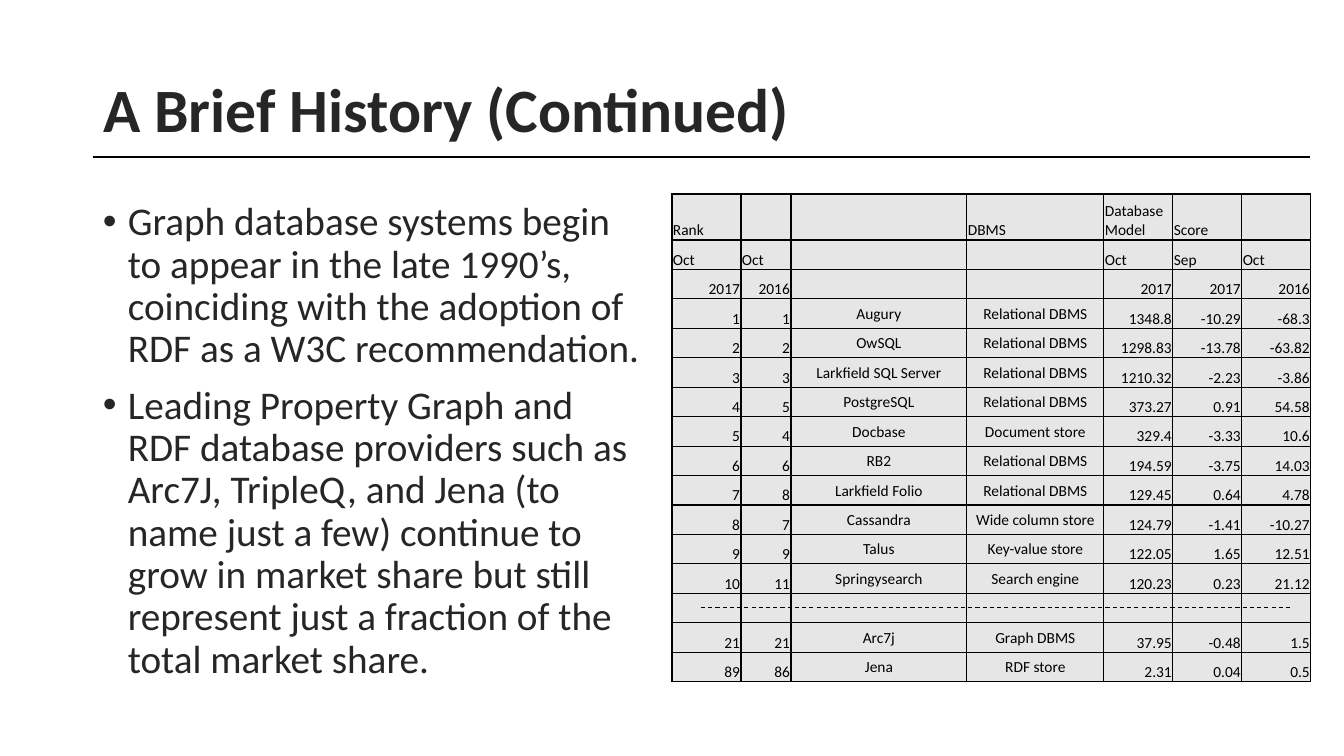
from dataclasses import dataclass
from typing import NamedTuple

from lxml.etree import SubElement as Sub
from pptx import Presentation
from pptx.dml.color import RGBColor as Rgb
from pptx.enum.dml import MSO_LINE as Dash
from pptx.enum.shapes import MSO_CONNECTOR as Conn
from pptx.enum.text import MSO_ANCHOR as Anchor, PP_ALIGN as Align
from pptx.oxml.ns import qn
from pptx.util import Pt

SCALE = 12192000 / 1344
FONT = "Calibri"
HUES = {"text": "262626", "ink": "000000", "cell": "E7E6E6"}


class Box(NamedTuple):
    left: int
    top: int
    width: int
    height: int


class Rank(NamedTuple):
    now: str = ""
    past: str = ""
    name: str = ""
    model: str = ""
    score: str = ""
    month: str = ""
    year: str = ""


@dataclass
class Rule:
    left: int
    right: int
    y: int
    weight: float
    dash: bool = False


TITLE = Box(93, 40, 1159, 146)
BODY = Box(93, 197, 562, 504)
GRID = Box(672, 194, 639, 488)
HEAD = 46
COLS = [69, 50, 176, 137, 69, 69, 69]
LABELS = 2
NAMED = 3

POINTS = [
    "Graph database systems begin to appear in the late 1990’s, coinciding "
    "with the adoption of RDF as a W3C recommendation.",
    "Leading Property Graph and RDF database providers such as Arc7J, TripleQ, "
    "and Jena (to name just a few) continue to grow in market share but still "
    "represent just a fraction of the total market share.",
]

RANKS = [
    Rank("Rank", model="DBMS", score="Database Model", month="Score"),
    Rank("Oct", "Oct", score="Oct", month="Sep", year="Oct"),
    Rank("2017", "2016", score="2017", month="2017", year="2016"),
    Rank("1", "1", "Augury", "Relational DBMS", "1348.8", "-10.29", "-68.3"),
    Rank("2", "2", "OwSQL", "Relational DBMS", "1298.83", "-13.78", "-63.82"),
    Rank("3", "3", "Larkfield SQL Server", "Relational DBMS", "1210.32", "-2.23", "-3.86"),
    Rank("4", "5", "PostgreSQL", "Relational DBMS", "373.27", "0.91", "54.58"),
    Rank("5", "4", "Docbase", "Document store", "329.4", "-3.33", "10.6"),
    Rank("6", "6", "RB2", "Relational DBMS", "194.59", "-3.75", "14.03"),
    Rank("7", "8", "Larkfield Folio", "Relational DBMS", "129.45", "0.64", "4.78"),
    Rank("8", "7", "Cassandra", "Wide column store", "124.79", "-1.41", "-10.27"),
    Rank("9", "9", "Talus", "Key-value store", "122.05", "1.65", "12.51"),
    Rank("10", "11", "Springysearch", "Search engine", "120.23", "0.23", "21.12"),
    Rank(),
    Rank("21", "21", "Arc7j", "Graph DBMS", "37.95", "-0.48", "1.5"),
    Rank("89", "86", "Jena", "RDF store", "2.31", "0.04", "0.5"),
]

RULES = [Rule(701, 1293, 608, 0.75, True), Rule(93, 1310, 157, 1.25)]


def emu(px: float) -> int:
    return round(px * SCALE)


def place(box: Box) -> list[int]:
    return [emu(px) for px in box]


def style(para, size: int, hue: str, bold: bool = False) -> None:
    font = para.font
    font.name, font.size, font.bold = FONT, Pt(size), bold
    font.color.rgb = Rgb.from_string(HUES[hue])


def add_title(slide, text: str) -> None:
    title = slide.shapes.title
    title.left, title.top, title.width, title.height = place(TITLE)
    frame = title.text_frame
    frame.text = text
    frame.vertical_anchor = Anchor.MIDDLE
    para = frame.paragraphs[0]
    para.alignment = Align.LEFT
    para.line_spacing = 0.9
    style(para, 44, "text", True)


def add_points(slide) -> None:
    frame = slide.shapes.add_textbox(*place(BODY)).text_frame
    frame.word_wrap = True
    for i, text in enumerate(POINTS):
        para = frame.add_paragraph() if i else frame.paragraphs[0]
        para.text = text
        props = para._p.get_or_add_pPr()
        props.set("marL", str(emu(25)))
        props.set("indent", str(-emu(25)))
        Sub(props, qn("a:buFont"), typeface="Arial")
        Sub(props, qn("a:buChar"), char="•")
        para.line_spacing = 0.9
        if i:
            para.space_before = Pt(10)
        style(para, 28, "text")


def add_edges(cell) -> None:
    props = cell._tc.get_or_add_tcPr()
    for i, side in enumerate(("lnL", "lnR", "lnT", "lnB")):
        line = props.makeelement(qn(f"a:{side}"), {"w": str(Pt(1))})
        fill = Sub(line, qn("a:solidFill"))
        Sub(fill, qn("a:srgbClr"), val=HUES["ink"])
        props.insert(i, line)


def fill_cell(cell, text: str, align: Align, anchor: Anchor) -> None:
    cell.text = text
    cell.margin_left = cell.margin_right = cell.margin_top = emu(1)
    cell.margin_bottom = 0
    cell.vertical_anchor = anchor
    cell.fill.solid()
    cell.fill.fore_color.rgb = Rgb.from_string(HUES["cell"])
    para = cell.text_frame.paragraphs[0]
    para.alignment = align
    style(para, 11, "ink")
    if not text:
        Sub(para._p, qn("a:endParaRPr"), sz="1100")
    add_edges(cell)


def add_ranks(slide) -> None:
    table = slide.shapes.add_table(len(RANKS), len(COLS), *place(GRID)).table
    table.first_row = table.horz_banding = False
    for col, width in zip(table.columns, COLS):
        col.width = emu(width)
    step = (GRID.height - HEAD) / (len(RANKS) - 1)
    for r, rank in enumerate(RANKS):
        table.rows[r].height = emu(step if r else HEAD)
        for c, text in enumerate(rank):
            align, anchor = Align.RIGHT, Anchor.BOTTOM
            if r < LABELS:
                align = Align.LEFT
            elif r >= NAMED and c in (2, 3):
                align, anchor = Align.CENTER, Anchor.MIDDLE
            fill_cell(table.cell(r, c), text, align, anchor)


def add_rule(slide, rule: Rule) -> None:
    ends = [emu(px) for px in (rule.left, rule.y, rule.right, rule.y)]
    link = slide.shapes.add_connector(Conn.STRAIGHT, *ends)
    link.line.color.rgb = Rgb.from_string(HUES["ink"])
    link.line.width = Pt(rule.weight)
    if rule.dash:
        link.line.dash_style = Dash.DASH
    Sub(link._element.spPr, qn("a:effectLst"))


def main() -> None:
    deck = Presentation()
    deck.slide_width, deck.slide_height = emu(1344), emu(756)
    slide = deck.slides.add_slide(deck.slide_layouts[5])
    add_title(slide, "A Brief History (Continued)")
    add_points(slide)
    add_ranks(slide)
    for rule in RULES:
        add_rule(slide, rule)
    deck.save("out.pptx")


if __name__ == "__main__":
    main()
